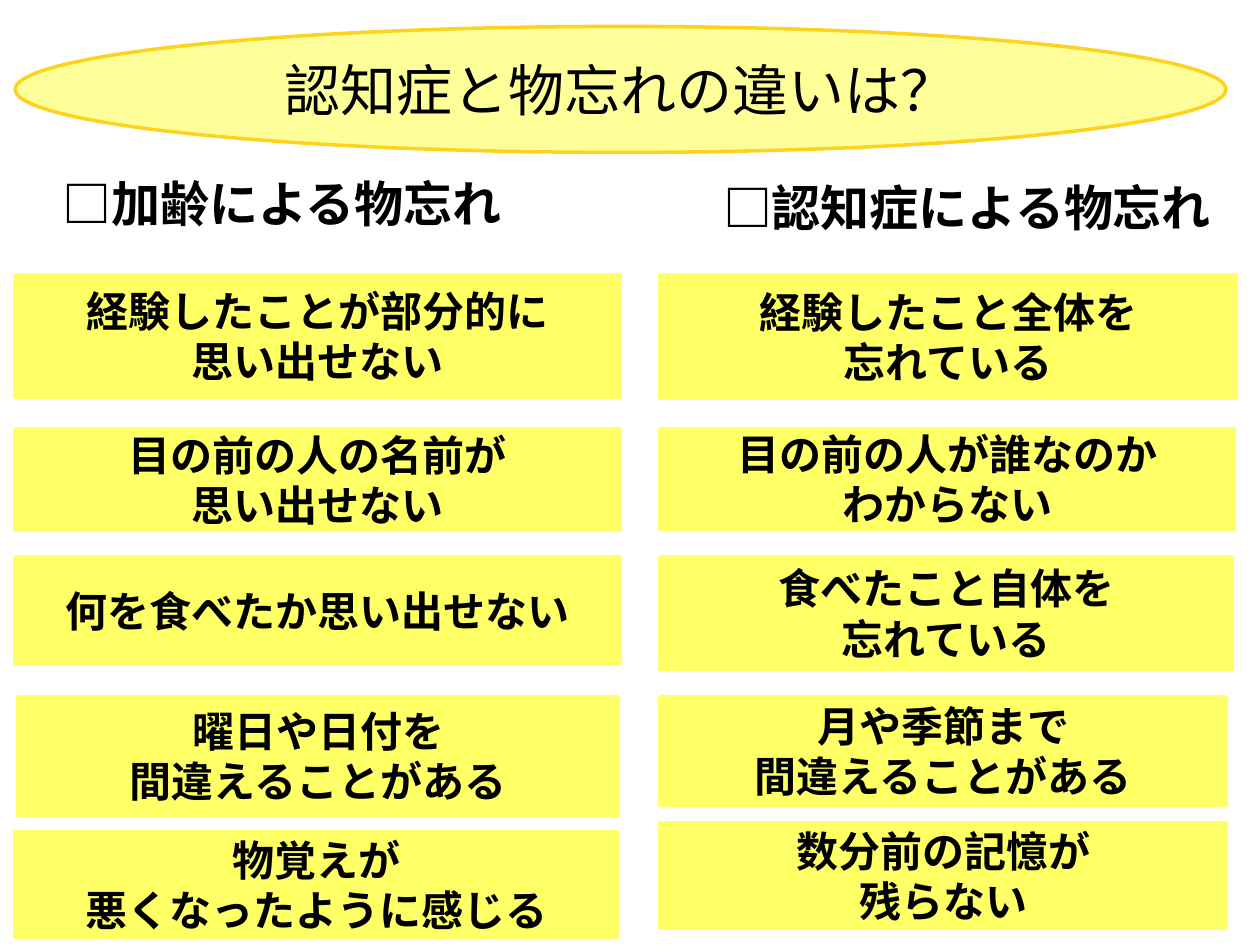
"""Build a slide comparing age-related forgetfulness with dementia."""
import pptx
import pptx.dml.color
import pptx.enum.shapes
import pptx.enum.text
import pptx.oxml.ns
import pptx.util
from lxml import etree

Inches = pptx.util.Inches
PALE_YELLOW = pptx.dml.color.RGBColor(0xFF, 0xFF, 0x99)
GOLD = pptx.dml.color.RGBColor(0xFD, 0xD3, 0x1F)
YELLOW = pptx.dml.color.RGBColor(0xFF, 0xFF, 0x66)
BLACK = pptx.dml.color.RGBColor(0, 0, 0)
FONT = "Noto Sans CJK JP"
CENTER = pptx.enum.text.PP_ALIGN.CENTER
LEFT = pptx.enum.text.PP_ALIGN.LEFT
SHAPES = pptx.enum.shapes.MSO_SHAPE


def write_lines(frame, lines, size, bold, alignment, anchor):
    frame.word_wrap = True
    frame.vertical_anchor = anchor
    for index, line in enumerate(lines):
        paragraph = frame.add_paragraph() if index else frame.paragraphs[0]
        paragraph.alignment = alignment
        run = paragraph.add_run()
        run.text = line
        run.font.size = pptx.util.Pt(size)
        run.font.bold = bold
        run.font.name = FONT
        run.font.color.rgb = BLACK
        east_asian = etree.SubElement(run.font._element, pptx.oxml.ns.qn("a:ea"))
        east_asian.set("typeface", FONT)


def add_panel(kind, left, top, width, height, fill, outline):
    panel = slide.shapes.add_shape(
        kind, Inches(left), Inches(top), Inches(width), Inches(height)
    )
    panel.shadow.inherit = False
    panel.fill.solid()
    panel.fill.fore_color.rgb = fill
    panel.line.color.rgb = outline
    panel.line.width = pptx.util.Pt(2)
    return panel


presentation = pptx.Presentation()
presentation.slide_width = Inches(10)
presentation.slide_height = Inches(7.5)
slide = presentation.slides.add_slide(presentation.slide_layouts[5])

title = slide.shapes.title
title_oval = add_panel(SHAPES.OVAL, 0.12, 0.21, 9.61, 1, PALE_YELLOW, GOLD)
title._element.addprevious(title_oval._element)
title.left, title.top = title_oval.left, title_oval.top
title.width, title.height = title_oval.width, title_oval.height
write_lines(title.text_frame, ["認知症と物忘れの違いは？"], 32, False, CENTER,
            pptx.enum.text.MSO_ANCHOR.MIDDLE)

headings = [
    ("□加齢による物忘れ", 0.4, 1.33),
    ("□認知症による物忘れ", 5.64, 1.36),
]
for heading, left, top in headings:
    heading_box = slide.shapes.add_textbox(
        Inches(left), Inches(top), Inches(4.2), Inches(0.57)
    )
    write_lines(heading_box.text_frame, [heading], 28, True, LEFT,
                pptx.enum.text.MSO_ANCHOR.TOP)

aging_symptoms = [
    (0.12, 2.18, 4.8, 0.97, ["経験したことが部分的に", "思い出せない"]),
    (0.12, 3.4, 4.8, 0.81, ["目の前の人の名前が", "思い出せない"]),
    (0.12, 4.42, 4.8, 0.85, ["何を食べたか思い出せない"]),
    (0.14, 5.53, 4.77, 0.94, ["曜日や日付を", "間違えることがある"]),
    (0.12, 6.6, 4.78, 0.84, ["物覚えが", "悪くなったように感じる"]),
]
dementia_symptoms = [
    (5.24, 2.18, 4.57, 0.98, ["経験したこと全体を", "忘れている"]),
    (5.24, 3.4, 4.56, 0.8, ["目の前の人が誰なのか", "わからない"]),
    (5.24, 4.42, 4.54, 0.89, ["食べたこと自体を", "忘れている"]),
    (5.24, 5.53, 4.49, 0.86, ["月や季節まで", "間違えることがある"]),
    (5.24, 6.53, 4.49, 0.84, ["数分前の記憶が", "残らない"]),
]
for left, top, width, height, lines in aging_symptoms + dementia_symptoms:
    symptom = add_panel(SHAPES.RECTANGLE, left, top, width, height, YELLOW, YELLOW)
    write_lines(symptom.text_frame, lines, 24, True, CENTER,
                pptx.enum.text.MSO_ANCHOR.MIDDLE)

presentation.save("out.pptx")
